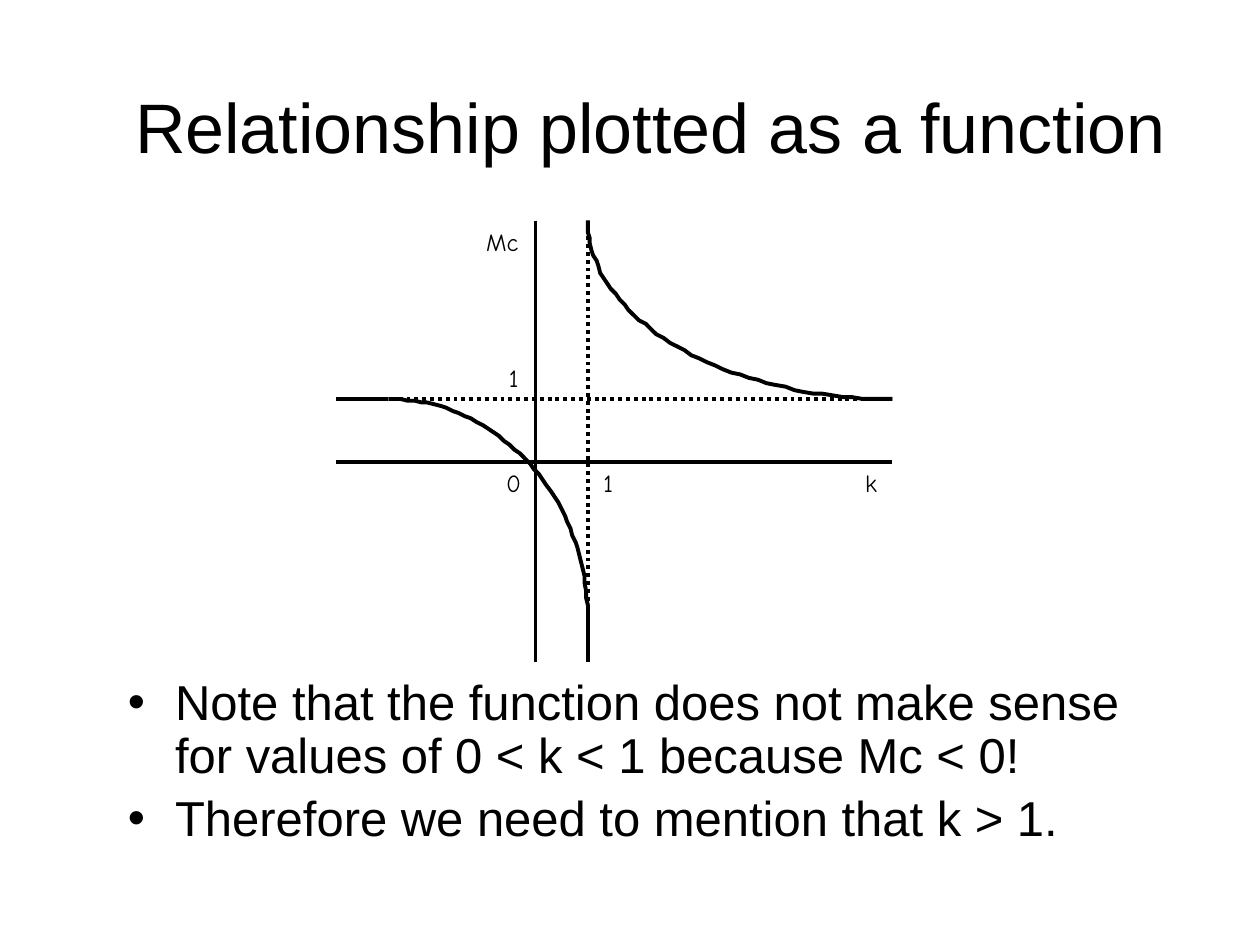
from math import cos, pi, sin

from lxml import etree
from pptx import Presentation
from pptx.dml.color import RGBColor
from pptx.enum import dml, shapes, text
from pptx.oxml import ns
from pptx.util import Pt

BLACK = "000000"


def color(value):
    return RGBColor.from_string(value)


def write(box, lines, size, font, **formats):
    """Fill a box with one paragraph per line and format them all alike."""
    frame = box.text_frame
    frame.text = "\n".join(lines)
    for para in frame.paragraphs:
        for name, value in formats.items():
            setattr(para, name, value)
        span = para.runs[0].font
        span.size, span.name, span.color.rgb = Pt(size), font, color(BLACK)


deck = Presentation()
deck.slide_width, deck.slide_height = Pt(720), Pt(540)
page = deck.slides.add_slide(deck.slide_layouts[5])

# Title
title = page.shapes.title
title.left, title.top, title.width, title.height = Pt(36), Pt(30), Pt(660), Pt(84)
write(title, [" Relationship plotted as a function"], 40, "Arial",
      alignment=text.PP_ALIGN.CENTER)
title.text_frame.vertical_anchor = text.MSO_ANCHOR.MIDDLE
title.text_frame.auto_size = text.MSO_AUTO_SIZE.NONE

# Bulleted notes
notes = page.shapes.add_textbox(Pt(66), Pt(384), Pt(678 - 66), Pt(132))
notes.text_frame.word_wrap = True
write(notes, ["Note that the function does not make sense for values of "
              "0 < k < 1 because Mc < 0!",
              "Therefore we need to mention that k > 1."], 28, "Arial",
      alignment=text.PP_ALIGN.LEFT, line_spacing=0.9, space_before=Pt(5.6))
for para in notes.text_frame.paragraphs:
    props = para._p.get_or_add_pPr()
    props.set("marL", str(Pt(27)))
    props.set("indent", str(-Pt(27)))
    etree.SubElement(props, ns.qn("a:buFont")).set("typeface", "Arial")
    etree.SubElement(props, ns.qn("a:buChar")).set("char", "•")

# Plot geometry
left, right, top, bottom = 192, 510, 126, 378
axis_x, axis_y = 306, 264          # the origin
asymptote_x, asymptote_y = 336, 228
flat_end, steep_start = 222, 354   # where the lower branch becomes straight

# Axes, dotted asymptotes and straight ends of the lower branch
for x1, y1, x2, y2, dotted in [
    (axis_x, top, axis_x, bottom, False),
    (left, axis_y, right, axis_y, False),
    (asymptote_x, top, asymptote_x, bottom, True),
    (left, asymptote_y, right, asymptote_y, True),
    (asymptote_x, steep_start, asymptote_x, bottom, False),
    (left, asymptote_y, flat_end, asymptote_y, False),
]:
    line = page.shapes.add_connector(
        shapes.MSO_CONNECTOR.STRAIGHT, Pt(x1), Pt(y1), Pt(x2), Pt(y2))
    line.line.width = Pt(2.25)
    line.line.color.rgb = color(BLACK)
    if dotted:
        line.line.dash_style = dml.MSO_LINE.ROUND_DOT
    etree.SubElement(line._element.spPr, ns.qn("a:effectLst"))

# Curved branches: quarter ellipses from one asymptote to the other
steps = 48
for center_x, center_y in [(flat_end, steep_start), (right, top)]:
    points = [
        (center_x + (asymptote_x - center_x) * sin(i * pi / 2 / steps),
         center_y + (asymptote_y - center_y) * cos(i * pi / 2 / steps))
        for i in range(steps + 1)
    ]
    builder = page.shapes.build_freeform(*points[0], scale=Pt(1))
    builder.add_line_segments(points[1:], close=False)
    curve = builder.convert_to_shape()
    curve.shadow.inherit = False
    curve.fill.background()
    curve.line.width = Pt(2.25)
    curve.line.color.rgb = color(BLACK)

# Axis labels
for label, x, y, width in [
    ("0", 282, 264, 23),
    ("1", 337, 264, 21),
    ("1", 283, 204, 21),
    ("Mc", 270, 126, 34),
    ("k", 486.5, 264, 22.5),
]:
    box = page.shapes.add_textbox(Pt(x), Pt(y), Pt(width), Pt(24))
    write(box, [label], 14, "Comic Neue", alignment=text.PP_ALIGN.CENTER)
    for name, value in {"word_wrap": False,
                        "vertical_anchor": text.MSO_ANCHOR.MIDDLE,
                        "auto_size": text.MSO_AUTO_SIZE.SHAPE_TO_FIT_TEXT}.items():
        setattr(box.text_frame, name, value)

deck.save("out.pptx")
